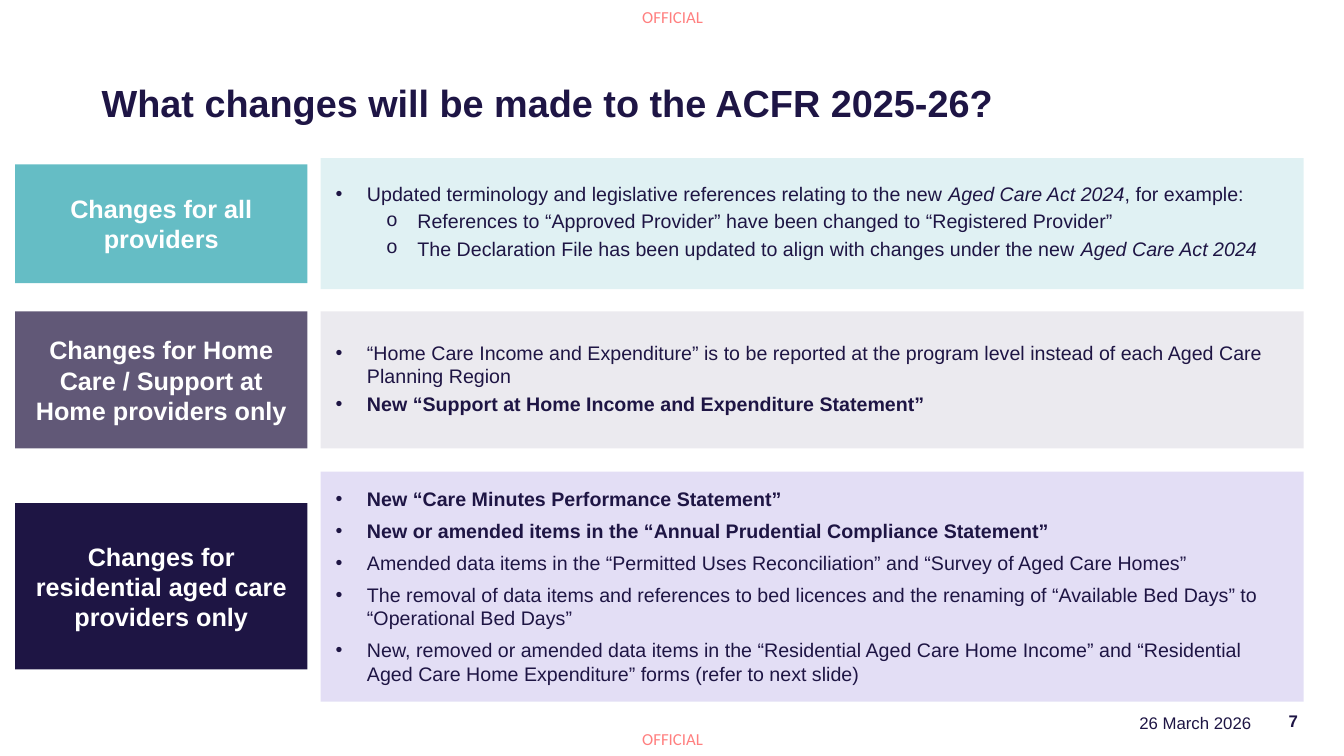
from lxml import etree
from pptx import Presentation
from pptx.dml.color import RGBColor
from pptx.enum.shapes import MSO_SHAPE
from pptx.enum.text import MSO_ANCHOR, PP_ALIGN
from pptx.oxml.ns import qn
from pptx.util import Pt

PX = 9144
RECT = MSO_SHAPE.RECTANGLE
TOP, MIDDLE = MSO_ANCHOR.TOP, MSO_ANCHOR.MIDDLE
LEFT, CENTER, RIGHT = PP_ALIGN.LEFT, PP_ALIGN.CENTER, PP_ALIGN.RIGHT
COLORS = {
    "navy": "1E1544",
    "title": "1E1545",
    "teal": "65BDC5",
    "plum": "615877",
    "mauve": "9E96B2",
    "violet": "735ECD",
    "white": "FFFFFF",
    "red": "FF0000",
}

# Items: (level, bold, space, text); asterisks enclose italics
ROWS = [
    {
        "label": "Changes for all providers",
        "tab": (163, 118, "teal"),
        "panel": (157, 130, "teal"),
        "body": (180, 939, 79),
        "items": [
            (0, False, 0, "Updated terminology and legislative references relating to "
                          "the new *Aged Care Act 2024*, for example:"),
            (1, False, 3, "References to “Approved Provider” have been changed to "
                          "“Registered Provider”"),
            (1, False, 0, "The Declaration File has been updated to align with changes "
                          "under the new *Aged Care Act 2024*"),
        ],
    },
    {
        "label": "Changes for Home Care / Support at Home providers only",
        "tab": (309, 136, "plum"),
        "panel": (309, 136, "mauve"),
        "body": (338, 929, 75),
        "items": [
            (0, False, 3, "“Home Care Income and Expenditure” is to be reported at the "
                          "program level instead of each Aged Care Planning Region"),
            (0, True, 0, "New “Support at Home Income and Expenditure Statement”"),
        ],
    },
    {
        "label": "Changes for residential aged care providers only",
        "tab": (499, 165, "navy"),
        "panel": (468, 228, "violet"),
        "body": (483, 939, 199),
        "items": [
            (0, True, 3, "New “Care Minutes Performance Statement”"),
            (0, True, 3, "New or amended items in the “Annual Prudential Compliance "
                         "Statement”"),
            (0, False, 3, "Amended data items in the “Permitted Uses Reconciliation” and "
                          "“Survey of Aged Care Homes”"),
            (0, False, 3, "The removal of data items and references to bed licences and "
                          "the renaming of “Available Bed Days” to “Operational Bed Days”"),
            (0, False, 3, "New, removed or amended data items in the “Residential Aged "
                          "Care Home Income” and “Residential Aged Care Home Expenditure” "
                          "forms (refer to next slide)"),
        ],
    },
]


def color(name):
    return RGBColor.from_string(COLORS[name])


def fade(node, percent):
    for tone in node.iter(qn("a:srgbClr")):
        etree.SubElement(tone, qn("a:alpha"), val=str(percent * 1000))


def style(par, size, tone, bold=False, face="Arial"):
    font = par.font
    font.name, font.size, font.bold = face, Pt(size), bold
    font.color.rgb = color(tone)


def add_rect(slide, box, tone):
    rect = slide.shapes.add_shape(RECT, *(n * PX for n in box))
    rect.shadow.inherit = False
    rect.fill.solid()
    rect.fill.fore_color.rgb = color(tone)
    rect.line.fill.background()
    return rect


def add_box(slide, box, inset=True, wrap=True, anchor=TOP):
    frame = slide.shapes.add_textbox(*(n * PX for n in box)).text_frame
    frame.word_wrap = wrap
    frame.vertical_anchor = anchor
    if not inset:
        frame.margin_left = frame.margin_right = 0
        frame.margin_top = frame.margin_bottom = 0
    return frame


def add_line(slide, box, text, size, tone, bold=False, align=LEFT, anchor=TOP):
    par = add_box(slide, box, anchor=anchor).paragraphs[0]
    par.text = text
    par.alignment = align
    style(par, size, tone, bold)
    return par


def add_mark(slide, top):
    par = add_box(slide, (637, top, 64, 20), inset=False, wrap=False).paragraphs[0]
    par.text = "OFFICIAL"
    style(par, 12, "red", face="Calibri")
    fade(par._p, 50)


def add_tab(slide, top, high, tone, text):
    frame = add_rect(slide, (15, top, 290, high), tone).text_frame
    frame.word_wrap = True
    frame.vertical_anchor = MIDDLE
    par = frame.paragraphs[0]
    par.text = text
    par.alignment = CENTER
    style(par, 18, "white", True)


def add_item(par, level, bold, text):
    props = par._p.get_or_add_pPr()
    props.set("marL", str((31 + 50 * level) * PX))
    props.set("indent", str(-31 * PX))
    face = ("Arial", "Courier New")[level]
    etree.SubElement(props, qn("a:buFont"), typeface=face)
    etree.SubElement(props, qn("a:buChar"), char="•o"[level])
    par.level = level
    for index, part in enumerate(text.split("*")):
        if part:
            run = par.add_run()
            run.text = part
            if index % 2:
                run.font.italic = True
    style(par, 14, "navy", bold)


def add_list(slide, top, wide, high, items):
    frame = add_box(slide, (333, top, wide, high), inset=False)
    for index, (level, bold, space, text) in enumerate(items):
        par = frame.add_paragraph() if index else frame.paragraphs[0]
        add_item(par, level, bold, text)
        par.space_before = Pt(space if index else 0)
        par.space_after = Pt(space)


def add_row(slide, row):
    add_tab(slide, *row["tab"], row["label"])
    top, high, tone = row["panel"]
    panel = add_rect(slide, (318, top, 975, high), tone)
    fade(panel._element.spPr, 20)
    add_list(slide, *row["body"], row["items"])


def main():
    deck = Presentation()
    deck.slide_width, deck.slide_height = 1333 * PX, 750 * PX
    slide = deck.slides.add_slide(deck.slide_layouts[6])
    for top in (7, 723):
        add_mark(slide, top)
    title = add_line(slide, (91, 74, 1001, 60),
                     "What changes will be made to the ACFR 2025-26?",
                     27, "title", True, anchor=MIDDLE)
    title.line_spacing = 0.9
    for row in ROWS:
        add_row(slide, row)
    add_line(slide, (951, 702, 300, 30), "26 March 2026", 12, "navy", align=RIGHT)
    add_line(slide, (1252, 695, 45, 40), "7", 12, "title", True, RIGHT, MIDDLE)
    deck.save("out.pptx")


if __name__ == "__main__":
    main()
